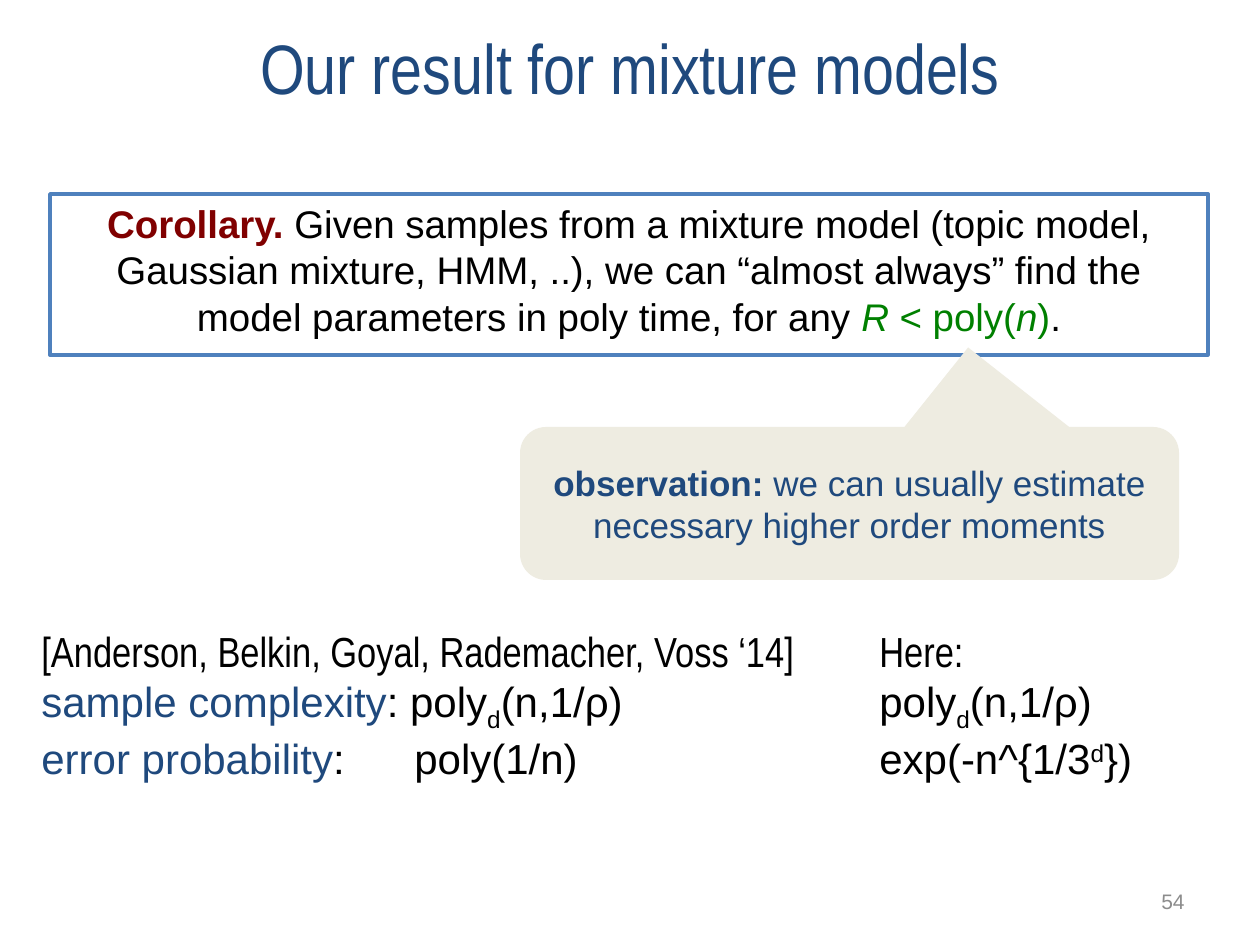
"""Build the slide on the result for mixture models."""
from lxml import etree
from pptx import Presentation, util as u
from pptx.dml.color import RGBColor
from pptx.enum import shapes, text
from pptx.oxml.ns import qn

NAVY = RGBColor(0x1F, 0x49, 0x7D)
BLUE = RGBColor(0x4F, 0x81, 0xBD)
MAROON = RGBColor(0x80, 0, 0)
GREEN = RGBColor(0, 0x80, 0)
BEIGE = RGBColor(0xEE, 0xEC, 0xE1)
GRAY = RGBColor(0x8C, 0x8C, 0x8C)
WHITE = RGBColor(0xFF, 0xFF, 0xFF)
BLACK = RGBColor(0, 0, 0)
SCALE = u.Inches(1) / 126
NARROW = {"name": "Arial Narrow"}
BOLD = {"bold": True}
ITALIC = {"italic": True}
SUB, SUPER = {"baseline": -25}, {"baseline": 30}
LEFT, CENTER, RIGHT = text.PP_ALIGN.LEFT, text.PP_ALIGN.CENTER, text.PP_ALIGN.RIGHT
TOP, MIDDLE = text.MSO_ANCHOR.TOP, text.MSO_ANCHOR.MIDDLE

TITLE = [[("Our result for mixture models", NAVY, NARROW)]]
NUMBER = [[("54", GRAY, {})]]
COROLLARY = [[
    ("Corollary. ", MAROON, BOLD),
    ("Given samples from a mixture model (topic model, Gaussian mixture, HMM, ..), "
     "we can “almost always” find the model parameters in poly time, for any ", BLACK, {}),
    ("R", GREEN, ITALIC), (" < poly(", GREEN, {}), ("n", GREEN, ITALIC),
    (")", GREEN, {}), (".", BLACK, {}),
]]
OBSERVATION = [[
    ("observation:", NAVY, BOLD),
    (" we can usually estimate necessary higher order moments", NAVY, {}),
]]
BOUND = [("d", BLACK, SUB), ("(n,1/ρ)", BLACK, {})]
EARLIER = [
    [("[Anderson, Belkin, Goyal, Rademacher, Voss ‘14]", BLACK, NARROW)],
    [("sample complexity", NAVY, {}), (": poly", BLACK, {}), *BOUND],
    [("error probability", NAVY, {}), (":\tpoly(1/n)", BLACK, {})],
]
HERE = [
    [("Here:", BLACK, NARROW)],
    [("poly", BLACK, {}), *BOUND],
    [("exp(-n^{1/3", BLACK, {}), ("d", BLACK, SUPER), ("})", BLACK, {})],
]


def px(*lengths):
    return [round(length * SCALE) for length in lengths]


def write(shape, paragraphs, size, align=LEFT, anchor=TOP, wrap=True):
    frame = shape.text_frame
    frame.word_wrap, frame.vertical_anchor = wrap, anchor
    for index, spans in enumerate(paragraphs):
        para = frame.add_paragraph() if index else frame.paragraphs[0]
        para.alignment = align
        for words, color, extra in spans:
            span = para.add_run()
            span.text = words
            look = {"name": "Arial", "size": u.Pt(size), "bold": False, "italic": False, **extra}
            baseline = look.pop("baseline", 0)
            for key, value in look.items():
                setattr(span.font, key, value)
            span.font.color.rgb = color
            if baseline:
                span.font._element.set("baseline", str(baseline * 1000))


def add_panel(page, kind, place, fill):
    panel = page.shapes.add_shape(kind, *px(*place))
    panel.shadow.inherit = False
    panel.fill.solid()
    panel.fill.fore_color.rgb = fill
    panel.line.fill.background()
    return panel


def add_tab(para, position):
    stops = etree.SubElement(para._p.get_or_add_pPr(), qn("a:tabLst"))
    etree.SubElement(stops, qn("a:tab"), pos=str(px(position)[0]), algn="l")


def main():
    deck = Presentation()
    deck.slide_width, deck.slide_height = px(1260, 945)
    page = deck.slides.add_slide(deck.slide_layouts[5])

    title = page.shapes.title
    title.left, title.top, title.width, title.height = px(32, 13, 1196, 106)
    write(title, TITLE, 40, CENTER, MIDDLE)

    number = page.shapes.add_textbox(*px(903, 876, 294, 50))
    write(number, NUMBER, 12, RIGHT, MIDDLE)

    corollary = add_panel(page, shapes.MSO_SHAPE.RECTANGLE, (50, 194, 1158, 161), WHITE)
    corollary.line.color.rgb = BLUE
    corollary.line.width = u.Pt(2)
    write(corollary, COROLLARY, 22, CENTER)
    corollary.text_frame.paragraphs[0].space_before = u.Pt(4.4)

    callout = add_panel(page, shapes.MSO_SHAPE.ROUNDED_RECTANGULAR_CALLOUT,
                        (520, 427, 659, 153), BEIGE)
    for index, value in enumerate((0.18, -1.02, 0.17)):
        callout.adjustments[index] = value
    write(callout, OBSERVATION, 20, CENTER, MIDDLE)

    for place, lines in (((29, 619, 791, 165), EARLIER), ((867, 619, 291, 165), HERE)):
        box = page.shapes.add_textbox(*px(*place))
        write(box, lines, 24, wrap=False)
        if lines is EARLIER:
            add_tab(box.text_frame.paragraphs[-1], 373)

    deck.save("out.pptx")


if __name__ == "__main__":
    main()
